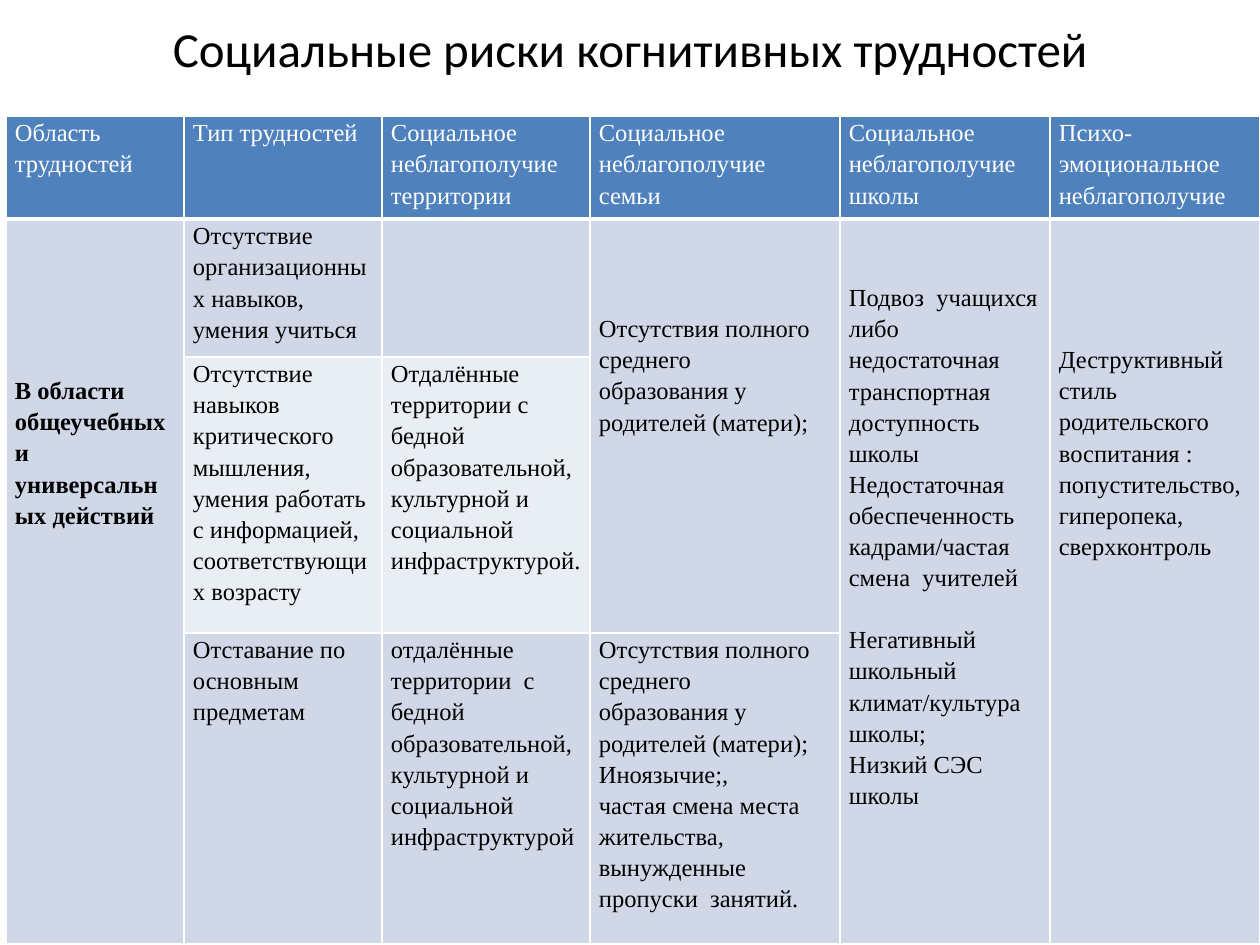
from lxml import etree
from pptx import Presentation
from pptx.dml.color import RGBColor
from pptx.enum.text import MSO_ANCHOR, PP_ALIGN
from pptx.oxml.ns import qn
from pptx.util import Emu, Pt

PX = 914400 // 126
CENTER, MIDDLE, TOP = PP_ALIGN.CENTER, MSO_ANCHOR.MIDDLE, MSO_ANCHOR.TOP
TITLE_ONLY = 5

TEXT_LINE = 31  # height of one table text line, in px
SIDE_MARGIN = 9
COLUMNS = [178, 198, 208, 250, 210, 210]
ROWS = [103, 138, 276, 311]
BLUE, LIGHT, PALE = "4F81BD", "D0D8E8", "E9EDF4"
ROW_FILLS = [BLUE, LIGHT, PALE, LIGHT]

TITLE_FORMAT = {"name": "Calibri", "size": Pt(28), "bold": False}
CELL_FORMAT = {"name": "Times New Roman", "size": Pt(14), "bold": False}
AREA_FORMAT = {**CELL_FORMAT, "bold": True}

HEADERS = [
    "Область трудностей",
    "Тип трудностей",
    "Социальное неблагополучие территории",
    "Социальное неблагополучие семьи",
    "Социальное неблагополучие школы",
    "Психо-эмоциональное неблагополучие",
]
PARENT_EDUCATION = "Отсутствия полного среднего  образования у родителей (матери);"
SCHOOL = [
    "Подвоз  учащихся либо недостаточная транспортная  доступность   школы",
    "Недостаточная  обеспеченность кадрами/частая   смена  учителей",
    "Негативный школьный климат/культура школы;",
    "Низкий СЭС школы",
]
SCHOOL_GAP_BEFORE = 2  # paragraph that opens the second group

# (row, column): paragraphs
BODY = {
    (1, 0): ["В области общеучебных и универсальных действий"],
    (1, 1): ["Отсутствие организационных навыков, умения учиться"],
    (1, 3): [PARENT_EDUCATION],
    (1, 4): SCHOOL,
    (1, 5): ["Деструктивный  стиль родительского воспитания : "
             "попустительство,гиперопека, сверхконтроль"],
    (2, 1): ["Отсутствие  навыков критического мышления,  умения работать "
             "с информацией,  соответствующих возрасту"],
    (2, 2): ["Отдалённые территории с бедной образовательной, культурной "
             "и социальной инфраструктурой."],
    (3, 1): ["Отставание по основным предметам"],
    (3, 2): ["отдалённые территории  с бедной образовательной, культурной "
             "и социальной инфраструктурой"],
    (3, 3): [PARENT_EDUCATION, "Иноязычие;,",
             "частая смена места жительства, вынужденные пропуски  занятий."],
}
# column: (last merged row, lines of space above the text)
MERGES = {0: (3, 5), 3: (2, 3), 4: (3, 2), 5: (3, 4)}


def px(value):
    return Emu(value * PX)


def color(value):
    return RGBColor.from_string(value)


def format_font(font, values, text_color):
    for name, value in values.items():
        setattr(font, name, value)
    font.color.rgb = color(text_color)


def add_title(slide, text):
    title = slide.shapes.title
    box = {"left": 63, "top": 0, "width": 1134, "height": 96}
    for name, value in box.items():
        setattr(title, name, px(value))
    frame = title.text_frame
    frame.text = text
    frame.vertical_anchor = MIDDLE
    paragraph = frame.paragraphs[0]
    paragraph.alignment = CENTER
    format_font(paragraph.runs[0].font, TITLE_FORMAT, "000000")


def set_borders(cell, widths):
    properties = cell._tc.get_or_add_tcPr()
    for index, (side, width) in enumerate(widths.items()):
        line = etree.Element(qn(f"a:ln{side}"), w=str(Pt(width)))
        fill = etree.SubElement(line, qn("a:solidFill"))
        etree.SubElement(fill, qn("a:srgbClr"), val="FFFFFF")
        properties.insert(index, line)


def style_cell(cell, row):
    margins = {"margin_left": SIDE_MARGIN, "margin_right": SIDE_MARGIN,
               "margin_top": 0, "margin_bottom": 0}
    for name, value in margins.items():
        setattr(cell, name, px(value))
    cell.vertical_anchor = TOP
    cell.fill.solid()
    cell.fill.fore_color.rgb = color(ROW_FILLS[row])
    set_borders(cell, {"L": 1, "R": 1,
                       "T": 3 if row == 1 else 1,
                       "B": 3 if row == 0 else 1})


def write_cell(cell, paragraphs, values, text_color):
    frame = cell.text_frame
    frame.text = "\n".join(paragraphs)
    for paragraph in frame.paragraphs:
        paragraph.line_spacing = 1.15
        format_font(paragraph.runs[0].font, values, text_color)


def add_risk_table(slide):
    frame = slide.shapes.add_table(len(ROWS), len(COLUMNS), px(6), px(116),
                                   px(sum(COLUMNS)), px(sum(ROWS)))
    table = frame.table
    for column, width in zip(table.columns, COLUMNS):
        column.width = px(width)
    for row, height in zip(table.rows, ROWS):
        row.height = px(height)
    for row in range(len(ROWS)):
        for column in range(len(COLUMNS)):
            style_cell(table.cell(row, column), row)

    # Header and body text
    for column, text in enumerate(HEADERS):
        write_cell(table.cell(0, column), [text], CELL_FORMAT, "FFFFFF")
    for (row, column), paragraphs in BODY.items():
        values = AREA_FORMAT if column == 0 else CELL_FORMAT
        write_cell(table.cell(row, column), paragraphs, values, "000000")

    # Cells that span several rows
    for column, (last_row, lines) in MERGES.items():
        cell = table.cell(1, column)
        cell.merge(table.cell(last_row, column))
        cell.margin_top = px(lines * TEXT_LINE)
    school = table.cell(1, 4).text_frame
    school.paragraphs[SCHOOL_GAP_BEFORE].space_before = px(TEXT_LINE)


def main():
    presentation = Presentation()
    presentation.slide_width = px(1260)
    presentation.slide_height = px(945)
    layout = presentation.slide_layouts[TITLE_ONLY]
    slide = presentation.slides.add_slide(layout)
    add_title(slide, "Социальные риски когнитивных трудностей")
    add_risk_table(slide)
    presentation.save("out.pptx")


if __name__ == "__main__":
    main()
